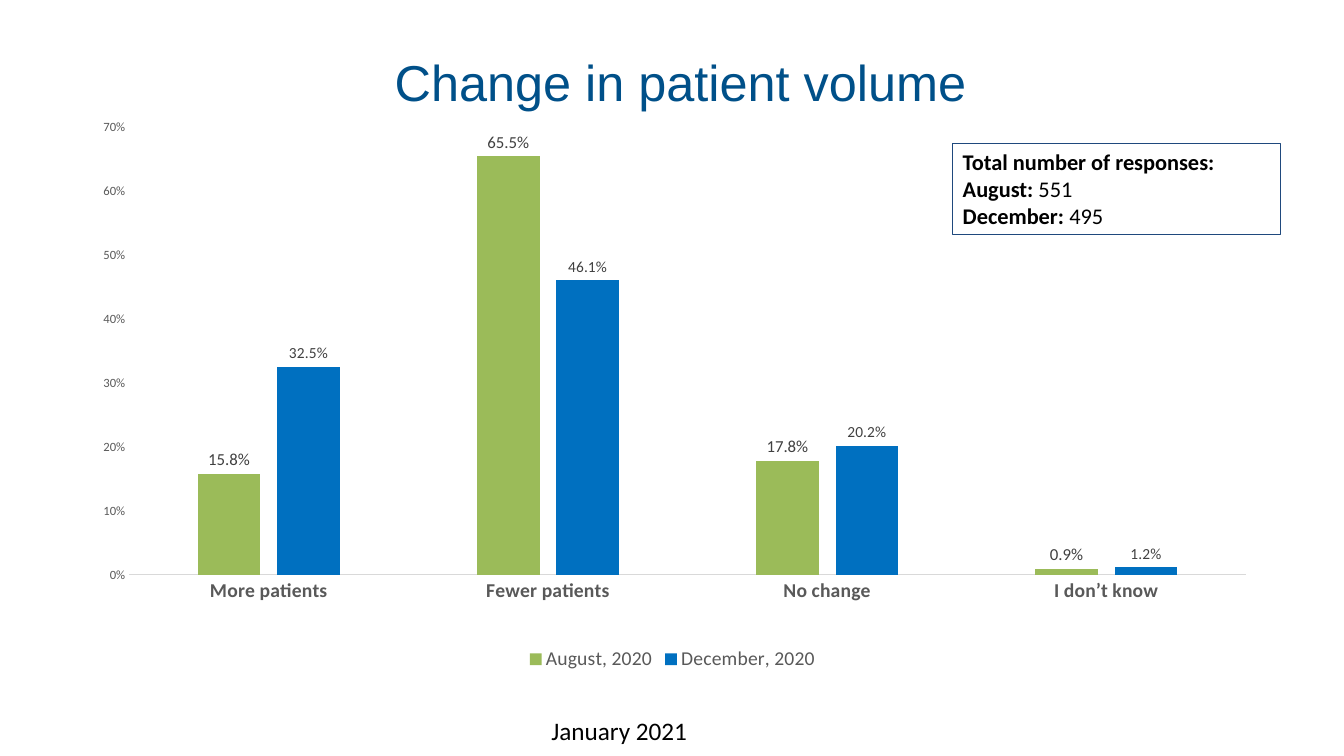
from lxml import etree
from pptx import Presentation
from pptx import util as u
from pptx.chart import data
from pptx.dml import color
from pptx.enum import chart as ch, shapes, text
from pptx.oxml import ns

TITLE_BLUE = color.RGBColor(0x00, 0x50, 0x89)
BORDER_BLUE = color.RGBColor(0x1F, 0x49, 0x7D)
AUGUST_GREEN = color.RGBColor(0x9B, 0xBB, 0x59)
DECEMBER_BLUE = color.RGBColor(0x00, 0x70, 0xC0)
BLACK = color.RGBColor(0x00, 0x00, 0x00)
LABEL_GREY = color.RGBColor(0x40, 0x40, 0x40)
AXIS_GREY = color.RGBColor(0x59, 0x59, 0x59)
LINE_GREY = color.RGBColor(0xD9, 0xD9, 0xD9)

ANSWERS = ["More patients", "Fewer patients", "No change", "I don’t know"]
SURVEYS = [
    ("August, 2020", [0.158, 0.655, 0.178, 0.009], AUGUST_GREEN, 12),
    ("December, 2020", [0.325, 0.461, 0.202, 0.012], DECEMBER_BLUE, 11),
]
RESPONSES = [
    [("Total number of responses:", True)],
    [("August: ", True), ("551", False)],
    [("December: ", True), ("495", False)],
]
PLOT_AREA = {"x": 0.051, "y": 0.017, "w": 0.923, "h": 0.803}


def style_font(font, size, rgb=BLACK, bold=False, name="Calibri"):
    font.name = name
    font.size = u.Pt(size)
    font.bold = bold
    font.color.rgb = rgb


def write(frame, lines, align=text.PP_ALIGN.LEFT, anchor=text.MSO_ANCHOR.TOP, **style):
    frame.word_wrap = True
    frame.vertical_anchor = anchor
    for index, line in enumerate(lines):
        paragraph = frame.add_paragraph() if index else frame.paragraphs[0]
        paragraph.alignment = align
        for words, bold in line:
            run = paragraph.add_run()
            run.text = words
            style_font(run.font, bold=bold, **style)


def place_plot(chart):
    plot_area = chart._chartSpace.chart.plotArea
    for old in plot_area.findall(ns.qn("c:layout")):
        plot_area.remove(old)
    layout = etree.Element(ns.qn("c:layout"))
    manual = etree.SubElement(layout, ns.qn("c:manualLayout"))
    settings = {"layoutTarget": "inner", "xMode": "edge", "yMode": "edge", **PLOT_AREA}
    for tag, value in settings.items():
        etree.SubElement(manual, ns.qn(f"c:{tag}")).set("val", str(value))
    plot_area.insert(0, layout)


class SurveySlide:
    def __init__(self, deck):
        self.slide = deck.slides.add_slide(deck.slide_layouts[6])

    def label(self, box, lines, **style):
        area = self.slide.shapes.add_textbox(*map(u.Inches, box))
        write(area.text_frame, lines, **style)

    def bordered_note(self, box, lines, **style):
        note = self.slide.shapes.add_shape(
            shapes.MSO_SHAPE.RECTANGLE, *map(u.Inches, box))
        note.shadow.inherit = False
        note.fill.background()
        note.line.color.rgb = BORDER_BLUE
        note.line.width = u.Pt(0.75)
        write(note.text_frame, lines, **style)

    def column_chart(self, box, categories, surveys):
        figures = data.CategoryChartData(number_format="0.0%")
        figures.categories = categories
        for name, values, _, _ in surveys:
            figures.add_series(name, values)
        chart = self.slide.shapes.add_chart(
            ch.XL_CHART_TYPE.COLUMN_CLUSTERED, *map(u.Inches, box), figures).chart
        style_font(chart.font, 10)
        chart.has_title = False
        chart.has_legend = True
        chart.legend.position = ch.XL_LEGEND_POSITION.BOTTOM
        chart.legend.include_in_layout = False
        style_font(chart.legend.font, 14, AXIS_GREY)
        self.style_axes(chart)
        plot = chart.plots[0]
        plot.gap_width = 219
        plot.overlap = -27
        plot.vary_by_categories = False
        for series, (_, _, fill, label_size) in zip(plot.series, surveys):
            series.invert_if_negative = False
            series.format.fill.solid()
            series.format.fill.fore_color.rgb = fill
            labels = series.data_labels
            labels.show_value = True
            labels.number_format = "0.0%"
            labels.number_format_is_linked = False
            labels.position = ch.XL_LABEL_POSITION.OUTSIDE_END
            style_font(labels.font, label_size, LABEL_GREY)
        place_plot(chart)

    def style_axes(self, chart):
        answers, share = chart.category_axis, chart.value_axis
        for axis, size, bold in ((answers, 14, True), (share, 9, False)):
            axis.major_tick_mark = axis.minor_tick_mark = ch.XL_TICK_MARK.NONE
            axis.has_major_gridlines = False
            style_font(axis.tick_labels.font, size, AXIS_GREY, bold)
        answers.format.line.color.rgb = LINE_GREY
        answers.format.line.width = u.Pt(0.75)
        share.format.line.fill.background()
        share.minimum_scale, share.maximum_scale, share.major_unit = 0, 0.7, 0.1
        share.tick_labels.number_format = "0%"
        share.tick_labels.number_format_is_linked = False


def main():
    deck = Presentation()
    deck.slide_width, deck.slide_height = u.Inches(13.33), u.Inches(7.5)
    page = SurveySlide(deck)
    page.label((1, 0.08, 11.5, 1.45), [[("Change in patient volume", False)]],
               align=text.PP_ALIGN.CENTER, anchor=text.MSO_ANCHOR.MIDDLE,
               size=36, rgb=TITLE_BLUE, name="Arial")
    page.bordered_note((9.45, 1.42, 3.25, 0.91), RESPONSES, size=16)
    page.column_chart((0.67, 1.17, 12, 5.53), ANSWERS, SURVEYS)
    page.label((5.37, 7.05, 4.22, 0.4), [[("January 2021", False)]], size=18)
    deck.save("out.pptx")


if __name__ == "__main__":
    main()
